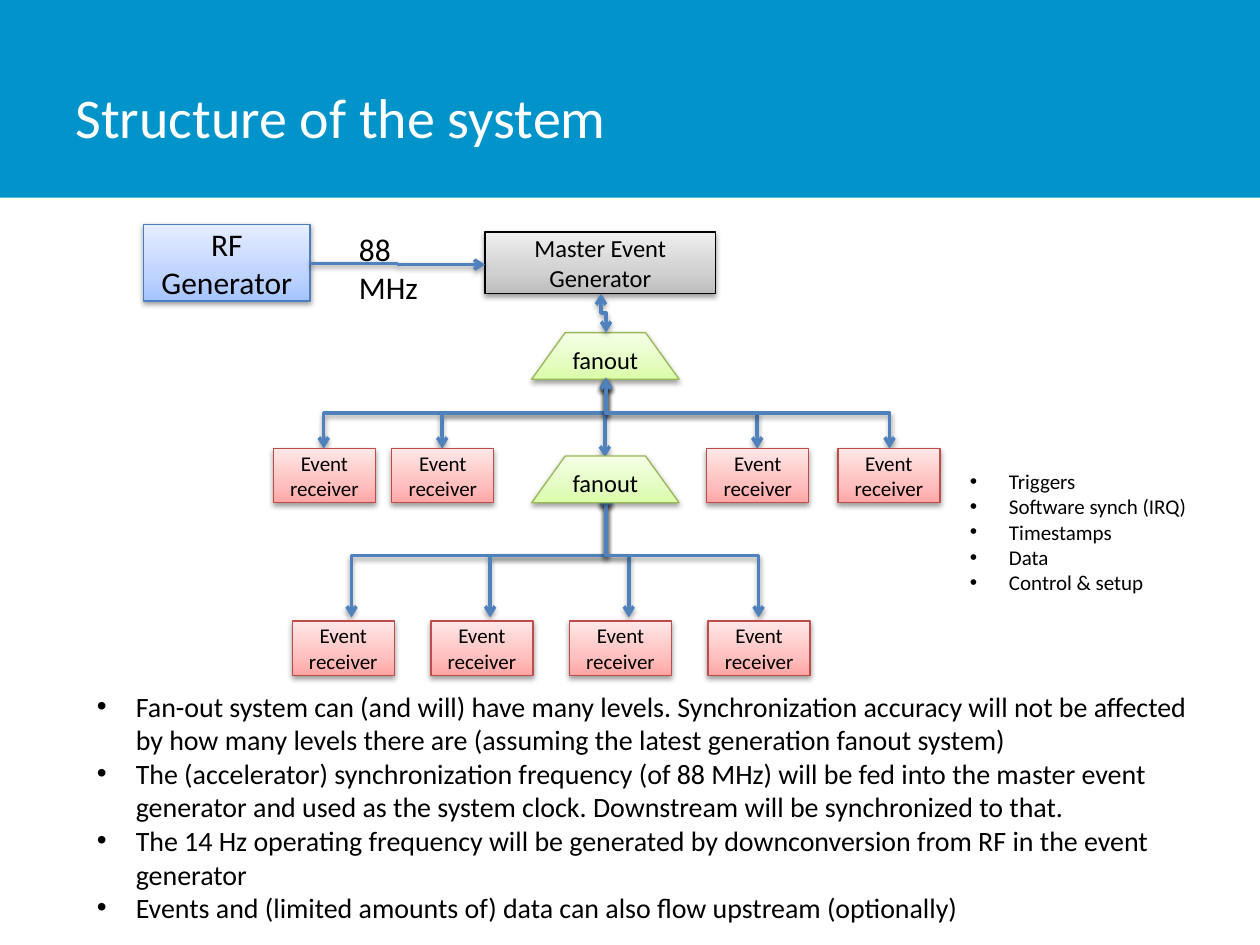
import copy

import pptx
import pptx.dml.color
import pptx.enum.shapes
import pptx.enum.text
import pptx.oxml
import pptx.oxml.ns
import pptx.util
from pptx.util import Inches, Pt

RGBColor = pptx.dml.color.RGBColor
SHAPE = pptx.enum.shapes.MSO_SHAPE
ELBOW = pptx.enum.shapes.MSO_CONNECTOR.ELBOW
CENTER = pptx.enum.text.PP_ALIGN.CENTER
MIDDLE = pptx.enum.text.MSO_ANCHOR.MIDDLE
qn = pptx.oxml.ns.qn

BLACK = RGBColor(0x00, 0x00, 0x00)
WHITE = RGBColor(0xFF, 0xFF, 0xFF)
BANNER = RGBColor(0x00, 0x94, 0xCA)
LINK = RGBColor(0x4F, 0x81, 0xBD)
# Outline, then gradient stops from bottom to top
GRAY = (BLACK, RGBColor(0xBD, 0xBD, 0xBD), RGBColor(0xD1, 0xD1, 0xD1), RGBColor(0xEE, 0xEE, 0xEE))
BLUE = (RGBColor(0x4B, 0x7E, 0xBC), RGBColor(0xA4, 0xC4, 0xFF),
        RGBColor(0xBF, 0xD4, 0xFF), RGBColor(0xE6, 0xEE, 0xFF))
GREEN = (RGBColor(0x98, 0xB9, 0x55), RGBColor(0xDA, 0xFD, 0xA7),
         RGBColor(0xE4, 0xFC, 0xC2), RGBColor(0xF5, 0xFF, 0xE7))
RED = (RGBColor(0xBF, 0x4C, 0x48), RGBColor(0xFF, 0xA6, 0xA5),
       RGBColor(0xFF, 0xC0, 0xBF), RGBColor(0xFF, 0xE7, 0xE7))

SHADOW = (
    '<a:effectLst xmlns:a="http://schemas.openxmlformats.org/drawingml/2006/main">'
    '<a:outerShdw blurRad="40000" dist="20000" dir="5400000" rotWithShape="0">'
    '<a:srgbClr val="000000"><a:alpha val="38000"/></a:srgbClr></a:outerShdw></a:effectLst>'
)

OUTPUTS = ["Triggers", "Software synch (IRQ)", "Timestamps", "Data", "Control & setup"]
NOTES = [
    "Fan-out system can (and will) have many levels. Synchronization accuracy will not be affected "
    "by how many levels there are (assuming the latest generation fanout system)",
    "The (accelerator) synchronization frequency (of 88 MHz) will be fed into the master event "
    "generator and used as the system clock. Downstream will be synchronized to that.",
    "The 14 Hz operating frequency will be generated by downconversion from RF in the event generator",
    "Events and (limited amounts of) data can also flow upstream (optionally)",
]


class Diagram:
    """Holds the slide and the text style, and draws each kind of element."""

    font = {"name": "Calibri"}

    def __init__(self, slide):
        self.slide = slide

    def fill_frame(self, frame, lines, size, color=BLACK, align=None, bullets=False):
        style = {**self.font, "size": Pt(size)}
        for index, line in enumerate(lines):
            paragraph = frame.paragraphs[0] if index == 0 else frame.add_paragraph()
            paragraph.text = line
            paragraph.alignment = align
            if bullets:
                properties = paragraph._p.get_or_add_pPr()
                properties.set("marL", str(Inches(0.31)))
                properties.set("indent", str(-Inches(0.31)))
                properties.append(properties.makeelement(qn("a:buFont"), {"typeface": "Arial"}))
                properties.append(properties.makeelement(qn("a:buChar"), {"char": "•"}))
            for name, value in style.items():
                setattr(paragraph.font, name, value)
            paragraph.font.color.rgb = color

    def banner(self, width, height):
        shape = self.slide.shapes.add_shape(SHAPE.RECTANGLE, 0, 0, Inches(width), Inches(height))
        shape.shadow.inherit = False
        shape.fill.solid()
        shape.fill.fore_color.rgb = BANNER
        shape.line.fill.background()

    def text(self, box, lines, size, color=BLACK, bullets=False, wrap=True, anchor=None):
        frame = self.slide.shapes.add_textbox(*map(Inches, box)).text_frame
        frame.word_wrap = wrap
        frame.vertical_anchor = anchor
        self.fill_frame(frame, lines, size, color, bullets=bullets)

    def node(self, box, lines, size, palette, kind=SHAPE.RECTANGLE):
        outline, *stops = palette
        shape = self.slide.shapes.add_shape(kind, *map(Inches, box))
        if kind == SHAPE.TRAPEZOID:
            shape.adjustments[0] = 0.72
        fill = shape.fill
        fill.gradient()
        fill.gradient_angle = 90
        properties = shape._element.spPr
        first_stop = properties.find(".//" + qn("a:gs"))
        first_stop.addnext(copy.deepcopy(first_stop))
        for stop, position, color in zip(fill.gradient_stops, (0, 0.35, 1), stops):
            stop.position = position
            stop.color.rgb = color
        shape.line.color.rgb = outline
        shape.line.width = Pt(0.75)
        properties.append(pptx.oxml.parse_xml(SHADOW))
        shape.text_frame.word_wrap = True
        shape.text_frame.vertical_anchor = MIDDLE
        self.fill_frame(shape.text_frame, lines, size, align=CENTER)

    def fanout(self, top):
        self.node((4.22, top, 1.17, 0.37), ["fanout"], 14, GREEN, SHAPE.TRAPEZOID)

    def receiver(self, left, top):
        self.node((left, top, 0.81, 0.43), ["Event", "receiver"], 12, RED)

    def elbow(self, start, end, arrows):
        connector = self.slide.shapes.add_connector(ELBOW, *map(Inches, start + end))
        connector.line.color.rgb = LINK
        connector.line.width = Pt(2)
        properties = connector._element.spPr
        line = properties.find(qn("a:ln"))
        for arrow in arrows:
            line.append(line.makeelement(qn("a:" + arrow), {"type": "arrow"}))
        properties.append(pptx.oxml.parse_xml(SHADOW))
        return connector

    def riser(self, start, end):
        """Two-way elbow that leaves start upwards: a sideways elbow turned by a quarter."""
        (x1, y1), (x2, y2) = start, end
        middle_x, middle_y = (x1 + x2) / 2, (y1 + y2) / 2
        side = 1 if x1 < x2 else -1
        reach, rise = side * (y1 - y2) / 2, abs(x2 - x1) / 2
        connector = self.elbow((middle_x + reach, middle_y + rise),
                               (middle_x - reach, middle_y - rise), ("headEnd", "tailEnd"))
        turn = 90 if side == 1 else 270
        connector._element.spPr.find(qn("a:xfrm")).set("rot", str(turn * 60000))


def main():
    presentation = pptx.Presentation()
    presentation.slide_width, presentation.slide_height = Inches(10), Inches(7.5)
    diagram = Diagram(presentation.slides.add_slide(presentation.slide_layouts[6]))

    diagram.banner(10, 1.57)
    diagram.text((0.5, 0.3, 7.81, 1.25), ["Structure of the system"], 32, WHITE, anchor=MIDDLE)
    diagram.text((0.67, 5.42, 8.9, 1.99), NOTES, 16, bullets=True)

    diagram.node((3.85, 1.84, 1.83, 0.49), ["Master Event Generator"], 14, GRAY)
    diagram.node((1.14, 1.78, 1.32, 0.61), ["RF Generator"], 18, BLUE)
    diagram.fanout(2.64)

    trunk = 4.81
    diagram.riser((trunk, 2.64), (4.77, 2.33))
    for x, y in ((2.57, 3.56), (3.51, 3.56), (4.8, 3.63), (6.01, 3.56), (7.06, 3.56)):
        diagram.riser((x, y), (trunk, 3))
    for x in (2.79, 3.89, 4.99, 6.02):
        diagram.riser((x, 4.9), (trunk, 3.92))
    diagram.elbow((2.46, 2.09), (3.85, 2.1), ("tailEnd",))
    diagram.text((2.75, 1.78, 0.92, 0.31), ["88 MHz"], 18)

    diagram.fanout(3.62)
    for left in (2.17, 3.11, 5.61, 6.65):
        diagram.receiver(left, 3.56)
    for column in range(4):
        diagram.receiver(2.32 + 1.1 * column, 4.93)
    diagram.text((7.6, 3.67, 1.94, 1.11), OUTPUTS, 12, bullets=True, wrap=False)

    presentation.save("out.pptx")


if __name__ == "__main__":
    main()
